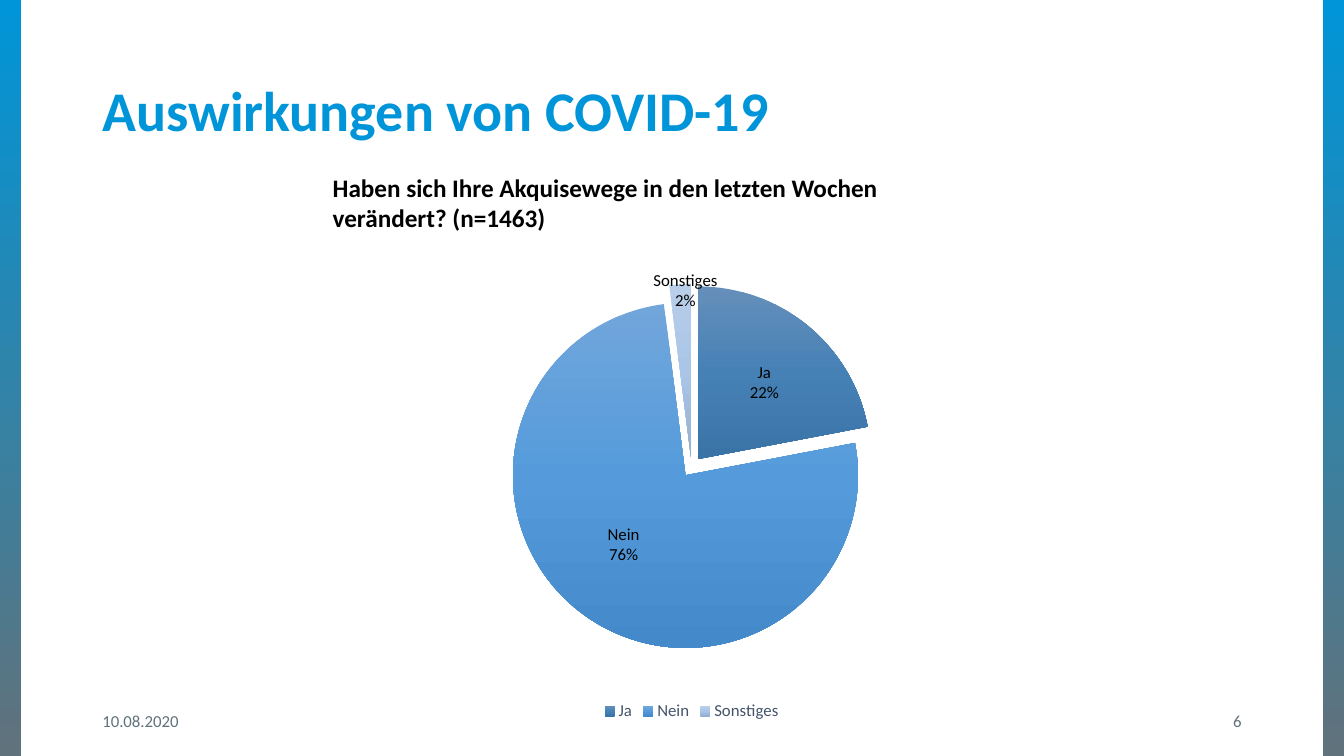
from copy import deepcopy

from lxml import etree
from pptx import Presentation
from pptx.chart.data import CategoryChartData
from pptx.dml.color import RGBColor
from pptx.enum import chart as ch, shapes, text
from pptx.oxml import parse_xml
from pptx.oxml.ns import qn
from pptx.util import Pt

FONT = "Calibri"
BLUE, GREY, BLACK = "0095D8", "60727B", "000000"
WIDTH, HEIGHT = 960, 540
BAR = 15
MARGIN = 66
CONTENT = WIDTH - 2 * MARGIN
CHART_NS = "http://schemas.openxmlformats.org/drawingml/2006/chart"

# answer: percent, gradient, shift of its label as a share of the chart
ANSWERS = {
    "Ja": (22, ("658FBA", "4681B6", "3A73A6"), (0.02, -0.02)),
    "Nein": (76, ("71A6DB", "559BDB", "448ACA"), (-0.02, 0)),
    "Sonstiges": (2, ("B8CEE9", "AAC5E8", "94AFD2"), (0, -0.16)),
}


def color(value):
    return RGBColor.from_string(value)


def style_font(font, size, value, bold=False):
    font.name, font.size, font.bold = FONT, Pt(size), bold
    font.color.rgb = color(value)


def fill_downward(fill, values):
    """Spread the colours evenly from top to bottom."""
    fill.gradient()
    fill.gradient_angle = 270
    first = fill.gradient_stops[0]._gs
    for _ in values[2:]:
        first.addnext(deepcopy(first))
    for index, (stop, value) in enumerate(zip(fill.gradient_stops, values)):
        stop.color.rgb = color(value)
        stop.position = index / (len(values) - 1)


def write(frame, words, size, value, bold=False, align=text.PP_ALIGN.LEFT,
          anchor=text.MSO_ANCHOR.MIDDLE):
    frame.word_wrap = True
    frame.vertical_anchor = anchor
    para = frame.paragraphs[0]
    para.alignment = align
    span = para.add_run()
    span.text = words
    style_font(span.font, size, value, bold)
    return para


def add_text(page, box, *args, **kwargs):
    area = page.shapes.add_textbox(*map(Pt, box))
    write(area.text_frame, *args, **kwargs)


def add_side_bars(page, box):
    left, top, width, height = box
    for x in (left, left + width - BAR):
        bar = page.shapes.add_shape(shapes.MSO_SHAPE.RECTANGLE,
                                    Pt(x), Pt(top), Pt(BAR), Pt(height))
        bar.shadow.inherit = False
        bar.line.fill.background()
        fill_downward(bar.fill, (BLUE, GREY))


def add_title(page, box):
    title = page.shapes.title
    title.left, title.top, title.width, title.height = map(Pt, box)
    para = write(title.text_frame, "Auswirkungen von COVID-19", 40, BLUE, True)
    para.line_spacing = 0.9


def add_footer(page, box):
    left, top, width, height = box
    field = 216
    add_text(page, (left, top, field, height), "10.08.2020", 12, GREY)
    add_text(page, (left + width - field, top, field, height), "6", 12, GREY,
             align=text.PP_ALIGN.RIGHT)


def layout_xml(target="", **values):
    """Manual chart layout, in shares of the chart's size."""
    items = "".join(f'<c:{key} val="{val}"/>' for key, val in values.items())
    return parse_xml(f'<c:layout xmlns:c="{CHART_NS}"><c:manualLayout>'
                     f'{target}{items}</c:manualLayout></c:layout>')


def label_slice(point, shift):
    style_font(point.data_label.font, 12, BLACK)
    point.data_label.position = ch.XL_LABEL_POSITION.CENTER
    label = point.data_label._dLbl
    label.find(qn("c:idx")).addnext(layout_xml(x=shift[0], y=shift[1]))
    for tag, shown in (("showVal", 0), ("showCatName", 1), ("showPercent", 1)):
        label.find(qn("c:" + tag)).set("val", str(shown))
    etree.SubElement(label, qn("c:separator")).text = "\n"


def add_pie(page, box):
    data = CategoryChartData()
    data.categories = list(ANSWERS)
    data.add_series("Series 1", [answer[0] for answer in ANSWERS.values()])
    chart = page.shapes.add_chart(ch.XL_CHART_TYPE.PIE, *map(Pt, box), data).chart
    chart.has_title = False
    style_font(chart.font, 10, BLACK)

    # Legend
    chart.has_legend = True
    chart.legend.position = ch.XL_LEGEND_POSITION.BOTTOM
    chart.legend.include_in_layout = False
    style_font(chart.legend.font, 12, "44546A")

    # Plot area
    area = chart._chartSpace.chart.plotArea
    for old in area.findall(qn("c:layout")):
        area.remove(old)
    area.insert(0, layout_xml(
        '<c:layoutTarget val="inner"/><c:xMode val="edge"/><c:yMode val="edge"/>',
        x=0.17, y=0.12, w=0.66, h=0.73))

    # Slices and their labels
    plot = chart.plots[0]
    plot.vary_by_categories = True
    series = plot.series[0]
    series.data_labels.show_value = False
    series.data_labels.show_category_name = True
    series.data_labels.show_percentage = True
    for index, (_, gradient, shift) in enumerate(ANSWERS.values()):
        point = series.points[index]
        fill_downward(point.format.fill, gradient)
        label_slice(point, shift)
    for lines in series._element.iter(qn("c:showLeaderLines")):
        lines.set("val", "0")
    series._element.find(qn("c:tx")).addnext(
        parse_xml(f'<c:explosion xmlns:c="{CHART_NS}" val="6"/>'))


def build_slide(deck):
    page = deck.slides.add_slide(deck.slide_layouts[5])
    add_side_bars(page, (0, 0, WIDTH, HEIGHT))
    add_title(page, (MARGIN, 29, CONTENT, 104))
    add_footer(page, (MARGIN, 500.5, CONTENT, 28.75))
    add_text(page, (230.5, 119.5, 480, 51),
             "Haben sich Ihre Akquisewege in den letzten Wochen verändert? (n=1463)",
             18, BLACK, True, anchor=text.MSO_ANCHOR.TOP)
    add_pie(page, (294, 160, 400, 358))


def main():
    deck = Presentation()
    deck.slide_width, deck.slide_height = Pt(WIDTH), Pt(HEIGHT)
    build_slide(deck)
    deck.save("out.pptx")


if __name__ == "__main__":
    main()
